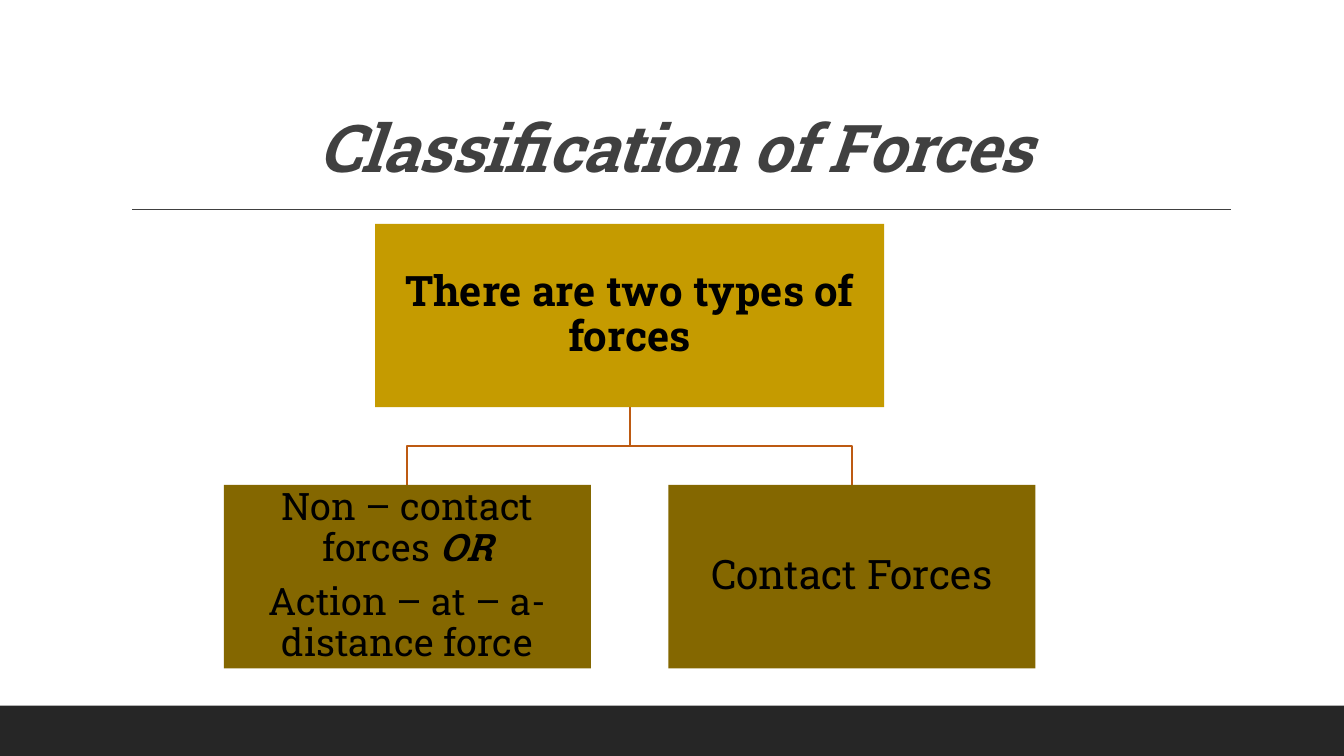
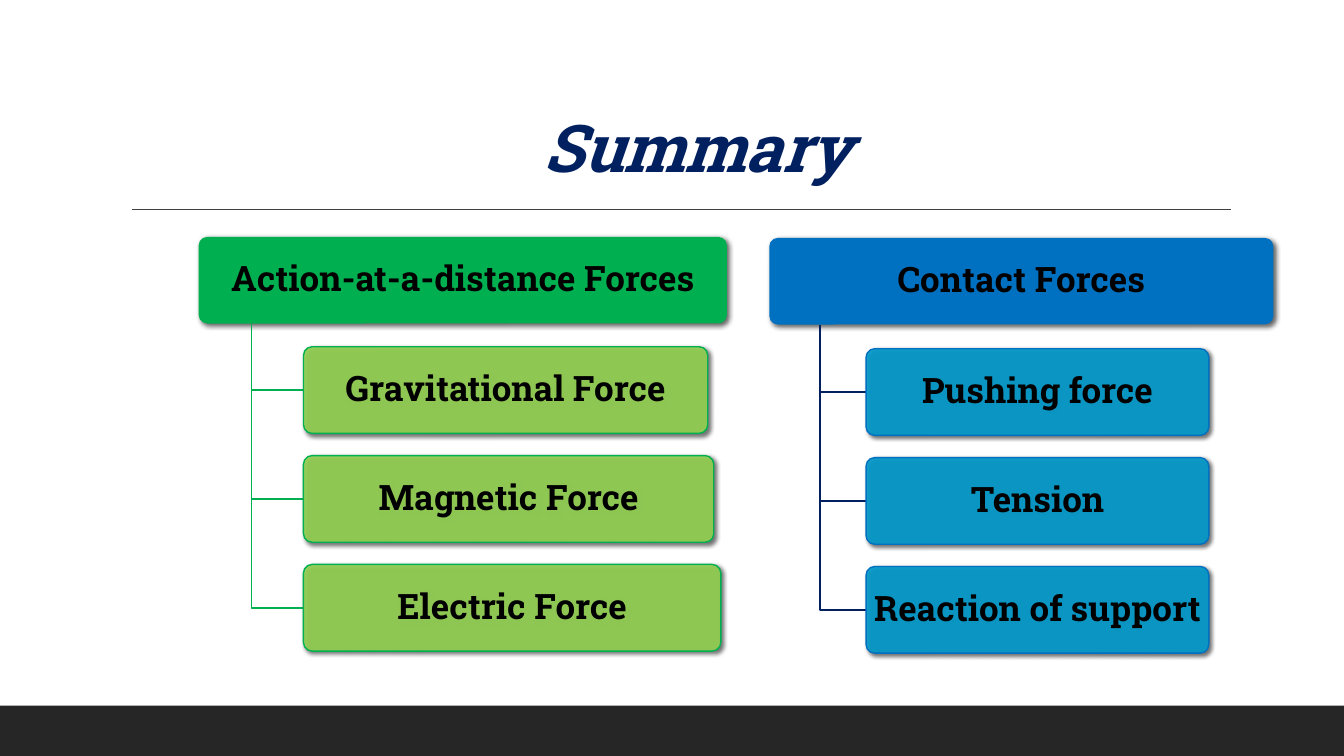
from lxml import etree
from pptx import Presentation
from pptx.dml.color import RGBColor
from pptx.enum import shapes, text
from pptx.oxml import ns
from pptx.util import Inches, Pt

FONT = "Roboto Slab"
BLACK = "000000"
CHARCOAL = "404040"
BAND = "262626"
NAVY = "002060"
GREEN = "00B050"
LIGHT_GREEN = "92D050"
BLUE = "0070C0"
LIGHT_BLUE = "0099CC"
GOLD = "C59B00"
DARK_GOLD = "846700"
RUST = "BD5A12"

SLIDE_WIDTH = 13.33
SLIDE_HEIGHT = 7.5
BAND_HEIGHT = 0.5
ITEM_HEIGHT = 0.86
ITEM_PITCH = 1.08


def color(value):
    return RGBColor.from_string(value)


def add_child(parent, tag, **attributes):
    return etree.SubElement(parent, ns.qn(tag), attributes)


def place(left, top, width, height):
    return [Inches(value) for value in (left, top, width, height)]


def write_text(shape, paragraphs, size, font_color=BLACK, bold=False, italic=False):
    frame = shape.text_frame
    frame.word_wrap = True
    frame.text = "\n".join(paragraphs)
    for index, paragraph in enumerate(frame.paragraphs):
        paragraph.alignment = text.PP_ALIGN.CENTER
        paragraph.line_spacing = 0.9
        if index:
            paragraph.space_before = Pt(round(size * 0.35, 1))
        for run in paragraph.runs:
            style_run(run, size, font_color, bold, italic)
    return frame


def style_run(run, size, font_color, bold, italic):
    run.font.name = FONT
    run.font.size = Pt(size)
    run.font.color.rgb = color(font_color)
    run.font.bold = bold
    run.font.italic = italic


def add_box(slide, kind, bounds, fill, line=None):
    shape = slide.shapes.add_shape(kind, *place(*bounds))
    shape.shadow.inherit = False
    shape.fill.solid()
    shape.fill.fore_color.rgb = color(fill)
    if line:
        shape.line.color.rgb = color(line)
        shape.line.width = Pt(1)
    else:
        shape.line.fill.background()
    return shape


def add_text_box(slide, kind, bounds, fill, paragraphs, size, bold, inset, line=None):
    shape = add_box(slide, kind, bounds, fill, line)
    frame = write_text(shape, paragraphs, size, bold=bold)
    frame.vertical_anchor = text.MSO_ANCHOR.MIDDLE
    frame.margin_left = frame.margin_right = Inches(inset)
    frame.margin_top = frame.margin_bottom = Inches(0.02)
    return shape


def add_shadow(shape, blur):
    effects = shape._element.spPr.find(ns.qn("a:effectLst"))
    shadow = add_child(
        effects, "a:outerShdw", blurRad=str(Pt(blur)), dist=str(Pt(2)),
        dir="2700000", algn="tl", rotWithShape="0",
    )
    shadow_color = add_child(shadow, "a:srgbClr", val=BLACK)
    add_child(shadow_color, "a:alpha", val="60000")


def set_opacity(shape, percent):
    fill = shape._element.spPr.find(ns.qn("a:solidFill"))
    add_child(fill[0], "a:alpha", val=str(percent * 1000))


def add_elbow(slide, points, line_color):
    corners = [(Inches(x), Inches(y)) for x, y in points]
    builder = slide.shapes.build_freeform(*corners[0], scale=1.0)
    builder.add_line_segments(corners[1:], close=False)
    elbow = builder.convert_to_shape()
    elbow.shadow.inherit = False
    elbow.fill.background()
    elbow.line.color.rgb = color(line_color)
    elbow.line.width = Pt(1.25)


def add_rule(slide):
    rule = slide.shapes.add_connector(
        shapes.MSO_CONNECTOR.STRAIGHT, *place(1.31, 2.08, 12.21, 2.08)
    )
    rule.line.color.rgb = color(CHARCOAL)
    rule.line.width = Pt(1)
    add_child(rule._element.spPr, "a:effectLst")


def add_slide(presentation, title, title_color, title_width):
    slide = presentation.slides.add_slide(presentation.slide_layouts[6])
    band = (0, SLIDE_HEIGHT - BAND_HEIGHT, SLIDE_WIDTH, BAND_HEIGHT)
    add_box(slide, shapes.MSO_SHAPE.RECTANGLE, band, BAND)
    add_rule(slide)
    box = slide.shapes.add_textbox(*place(1.2, 0.31, title_width, 1.59))
    frame = write_text(box, [title], 47, title_color, bold=True, italic=True)
    frame.vertical_anchor = text.MSO_ANCHOR.BOTTOM
    frame.paragraphs[0].runs[0]._r.get_or_add_rPr().set("spc", "-50")
    return slide


def add_class_box(slide, bounds, fill, paragraphs, size, bold=False):
    return add_text_box(
        slide, shapes.MSO_SHAPE.RECTANGLE, bounds, fill, paragraphs, size, bold, 0.02
    )


def add_card(slide, bounds, fill, label, line=None):
    card = add_text_box(
        slide, shapes.MSO_SHAPE.ROUNDED_RECTANGLE, bounds, fill, [label], 25, True, 0.05, line
    )
    card.adjustments[0] = 0.1
    add_shadow(card, 3 if line else 3.5)
    if line:
        set_opacity(card, 90)


def add_force_list(slide, header, header_bounds, items, item_left, first_top, palette):
    header_fill, item_fill, elbow_color = palette
    left, top, width, height = header_bounds
    add_card(slide, header_bounds, header_fill, header)
    trunk = left + width / 10
    for index, (label, item_width) in enumerate(items):
        item_top = first_top + index * ITEM_PITCH
        middle = item_top + ITEM_HEIGHT / 2
        elbow = [(trunk, top + height), (trunk, middle), (item_left, middle)]
        add_elbow(slide, elbow, elbow_color)
        bounds = (item_left, item_top, item_width, ITEM_HEIGHT)
        add_card(slide, bounds, item_fill, label, header_fill)


def build_classification(presentation):
    slide = add_slide(presentation, "Classification of Forces", CHARCOAL, 11)
    root_left, root_top, root_width, height = 3.72, 2.22, 5.05, 1.82
    branch_lefts, branch_top, branch_width = (2.22, 6.63), 4.81, 3.64
    root_center = root_left + root_width / 2
    root_bottom = root_top + height
    bend = (root_bottom + branch_top) / 2
    for left in reversed(branch_lefts):
        center = left + branch_width / 2
        elbow = [(root_center, root_bottom), (root_center, bend), (center, bend), (center, branch_top)]
        add_elbow(slide, elbow, RUST)
    root = (root_left, root_top, root_width, height)
    add_class_box(slide, root, GOLD, ["There are two types of forces"], 30, bold=True)
    branches = [
        (["Non – contact forces ", "Action – at – a- distance force"], 27),
        (["Contact Forces"], 29),
    ]
    boxes = [
        add_class_box(slide, (left, branch_top, branch_width, height), DARK_GOLD, paragraphs, size)
        for left, (paragraphs, size) in zip(branch_lefts, branches)
    ]
    emphasis = boxes[0].text_frame.paragraphs[0].add_run()
    emphasis.text = "OR"
    style_run(emphasis, 27, BLACK, bold=True, italic=True)


def build_summary(presentation):
    slide = add_slide(presentation, "Summary", NAVY, 11.44)
    distance_forces = [
        ("Gravitational Force", 4.01), ("Magnetic Force", 4.07), ("Electric Force", 4.14),
    ]
    contact_forces = [
        (label, 3.4) for label in ("Pushing force", "Tension", "Reaction of support")
    ]
    add_force_list(
        slide, "Action-at-a-distance Forces", (1.97, 2.35, 5.24, ITEM_HEIGHT),
        distance_forces, 3.01, 3.44, (GREEN, LIGHT_GREEN, GREEN),
    )
    add_force_list(
        slide, "Contact Forces", (7.63, 2.36, 5, ITEM_HEIGHT),
        contact_forces, 8.59, 3.46, (BLUE, LIGHT_BLUE, NAVY),
    )


def main():
    presentation = Presentation()
    presentation.slide_width = Inches(SLIDE_WIDTH)
    presentation.slide_height = Inches(SLIDE_HEIGHT)
    build_classification(presentation)
    build_summary(presentation)
    presentation.save("out.pptx")


if __name__ == "__main__":
    main()
